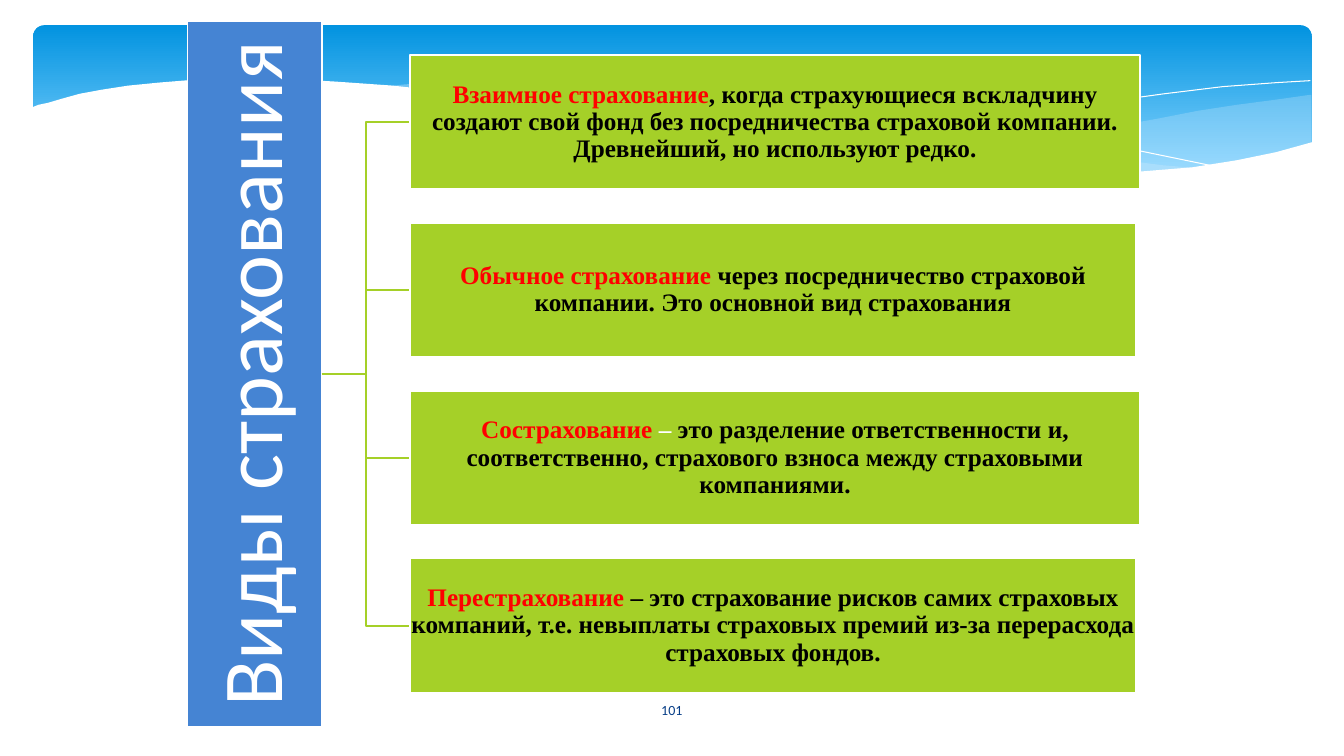
"""Builds the slide on the four kinds of insurance."""
from dataclasses import dataclass

from lxml import etree
from pptx import Presentation
from pptx.dml.color import RGBColor
from pptx.enum.shapes import MSO_CONNECTOR, MSO_SHAPE
from pptx.enum.text import MSO_ANCHOR, MSO_AUTO_SIZE, PP_ALIGN
from pptx.oxml.ns import qn
from pptx.util import Pt

RECTANGLE = MSO_SHAPE.RECTANGLE
ROUNDED = MSO_SHAPE.ROUNDED_RECTANGLE
ELBOW = MSO_CONNECTOR.ELBOW
CENTER = PP_ALIGN.CENTER
MIDDLE = MSO_ANCHOR.MIDDLE
NO_AUTOFIT = MSO_AUTO_SIZE.NONE

TITLE = "Виды страхования"
PAGE_NUMBER = "101"
KINDS = [
    [("Взаимное страхование", "term"),
     (", когда страхующиеся вскладчину создают свой фонд без посредничества "
      "страховой компании. Древнейший, но используют редко.", "body")],
    [("Обычное страхование ", "term"),
     ("через посредничество страховой компании. Это основной вид страхования", "body")],
    [("Сострахование ", "term"), ("– ", "white"),
     ("это разделение ответственности и, соответственно, страхового взноса "
      "между страховыми компаниями.", "body")],
    [("Перестрахование", "term"),
     (" – это страхование рисков самих страховых компаний, т.е. невыплаты "
      "страховых премий из-за перерасхода страховых фондов.", "body")],
]

RIGHT_WAVE = [
    (936, 67.7), (910.8, 71.3), (883.4, 74.9), (855.4, 79.2), (825.8, 85),
    (772.6, 94.3), (723.6, 103), (677.5, 109.4), (635, 115.2), (676.8, 118.1),
    (715, 121), (750, 123.1), (781.2, 123.8), (810.7, 123.1), (837.4, 121.7),
    (861.1, 118.8), (884.2, 115.2), (905, 110.9), (924.5, 105.8), (936.7, 102.2),
    (936.7, 67.7)]
LONG_WAVE = [
    (856.8, 120.2), (830.9, 118.1), (774.7, 110.9), (712.1, 102.2), (641.5, 90.7),
    (589, 80.6), (546.5, 73.4), (506.2, 68.4), (469.4, 63.8), (424.1, 59.8),
    (383, 57.6), (347, 57.6), (314.6, 58.3), (287.3, 60.5), (275, 61.9),
    (310.3, 64.8), (347.8, 69.8), (388.1, 76.3), (431.3, 83.5), (508.3, 97.2),
    (577.4, 108), (638.6, 115.9), (693.4, 121), (742.3, 123.8), (785.5, 124.6),
    (823, 123.1), (848.9, 121)]
FALLING_LINE = [
    (296.6, 64.8), (315.4, 61.9), (338.4, 60.5), (371.5, 59), (415.4, 58.7),
    (469.4, 60.5), (534.2, 65.5), (610.6, 74.2), (698.4, 86.4), (797.8, 104.4),
    (871.2, 119.5)]
RISING_LINE = [
    (589, 108.7), (626.4, 101.5), (667.4, 93.6), (717.8, 84.2), (774, 74.9),
    (831.6, 67), (873.4, 61.9), (912.2, 59), (936, 57.6)]
WHITE_WAVE = [
    (937.5, 101.5), (911.5, 108.7), (883.4, 114.5), (851.8, 119.5), (816.5, 122.4),
    (776.2, 123.1), (730.8, 122.4), (679.7, 118.8), (621.4, 112.3), (555.8, 103.7),
    (483.1, 92.2), (429.1, 82.1), (375.1, 73.4), (326.2, 66.2), (280.8, 61.2),
    (239.8, 58.3), (203, 56.2), (169.2, 56.2), (139.7, 56.9), (113.8, 59),
    (91.4, 61.2), (72.7, 64.1), (56.9, 67), (43.9, 70.6), (34.6, 73.4),
    (27.4, 74.9), (22.3, 77), (22.3, 161.3), (938.2, 161.3), (938.2, 101)]
WAVES = [(RIGHT_WAVE, "wave", 29), (LONG_WAVE, "wave", 40), (FALLING_LINE, None, 100),
         (RISING_LINE, None, 100), (WHITE_WAVE, "white", 100)]

BANNER = (23.8, 18, 913, 112.3)
MIDDLE_Y = 267.1
BAR_CENTER_X, BAR_LENGTH, BAR_THICKNESS = 181.9, 504.7, 96
BOX_LEFT, BOX_HEIGHT, BOX_STEP = 293, 96, 119.9
BOX_WIDTHS = (521.3, 518.4)
NUMBER_BOX = (419, 492.5, 121.7, 28.8)


@dataclass(frozen=True)
class Theme:
    """Colours, fonts and sizes of the slide."""
    white: str = "FFFFFF"
    sky_top: str = "0293E0"
    sky_bottom: str = "83D3FE"
    wave: str = "C6E7FC"
    bar: str = "4584D3"
    box: str = "A5D028"
    term: str = "FF0000"
    body: str = "000000"
    number: str = "073E87"
    sans: str = "Calibri"
    serif: str = "Times New Roman"
    title_size: float = 61
    box_size: float = 18
    number_size: float = 10
    line_width: float = 1.25

    def color(self, name):
        """Return the named colour."""
        return RGBColor.from_string(getattr(self, name))


THEME = Theme()


def points(*values):
    """Convert numbers to point lengths."""
    return [Pt(value) for value in values]


def paint(shape, fill, line="white"):
    """Give a shape a plain fill and outline."""
    shape.fill.solid()
    shape.fill.fore_color.rgb = THEME.color(fill)
    shape.line.color.rgb = THEME.color(line)
    shape.line.width = Pt(THEME.line_width)


def write(shape, runs, font_name, size, inset, bold=False, spacing=1.0):
    """Write one centred paragraph of coloured runs."""
    frame = shape.text_frame
    frame.word_wrap = True
    frame.auto_size = NO_AUTOFIT
    frame.vertical_anchor = MIDDLE
    frame.margin_left = frame.margin_right = Pt(inset)
    frame.margin_top = frame.margin_bottom = Pt(inset)
    paragraph = frame.paragraphs[0]
    paragraph.alignment = CENTER
    paragraph.line_spacing = spacing
    for text, color in runs:
        run = paragraph.add_run()
        run.text = text
        run.font.name = font_name
        run.font.size = Pt(size)
        run.font.bold = bold
        run.font.color.rgb = THEME.color(color)


def draw_wave(slide, outline, fill, opacity):
    """Draw a filled wave, or a thin white curve when there is no fill."""
    vertices = [points(*vertex) for vertex in outline]
    builder = slide.shapes.build_freeform(*vertices[0], scale=1.0)
    builder.add_line_segments(vertices[1:], close=fill is not None)
    shape = builder.convert_to_shape()
    shape.shadow.inherit = False
    if fill is None:
        shape.fill.background()
        shape.line.color.rgb = THEME.color("white")
        shape.line.width = Pt(0)
        return
    paint(shape, fill)
    shape.line.fill.background()
    color = shape.element.spPr.find(qn("a:solidFill"))[0]
    etree.SubElement(color, qn("a:alpha")).set("val", str(opacity * 1000))


def draw_banner(slide):
    """Draw the blue banner and its waves."""
    banner = slide.shapes.add_shape(ROUNDED, *points(*BANNER))
    banner.shadow.inherit = False
    banner.adjustments[0] = 0.07
    banner.line.fill.background()
    banner.fill.gradient()
    banner.fill.gradient_angle = 270
    stops = banner.fill.gradient_stops
    for stop, color, position in zip(stops, ("sky_top", "sky_bottom"), (0, 0.9)):
        stop.color.rgb = THEME.color(color)
        stop.position = position
    for outline, fill, opacity in WAVES:
        draw_wave(slide, outline, fill, opacity)


def draw_title(slide):
    """Turn the title into the upright bar."""
    title = slide.shapes.title
    slide.shapes.element.append(title.element)
    title.left, title.top, title.width, title.height = points(
        BAR_CENTER_X - BAR_LENGTH / 2, MIDDLE_Y - BAR_THICKNESS / 2, BAR_LENGTH, BAR_THICKNESS)
    title.rotation = 270
    paint(title, "bar")
    write(title, [(TITLE, "white")], THEME.sans, THEME.title_size, 3, spacing=0.9)


def draw_kinds(slide):
    """Draw the elbow connectors and the four boxes."""
    first = MIDDLE_Y - BOX_STEP * (len(KINDS) - 1) / 2
    centers = [first + BOX_STEP * index for index in range(len(KINDS))]
    bar_right = BAR_CENTER_X + BAR_THICKNESS / 2
    for center in centers:
        link = slide.shapes.add_connector(ELBOW, *points(bar_right, MIDDLE_Y, BOX_LEFT, center))
        link.line.color.rgb = THEME.color("box")
        link.line.width = Pt(THEME.line_width)
        etree.SubElement(link.element.spPr, qn("a:effectLst"))
    for index, (runs, center) in enumerate(zip(KINDS, centers)):
        box = slide.shapes.add_shape(RECTANGLE, *points(
            BOX_LEFT, center - BOX_HEIGHT / 2, BOX_WIDTHS[index % 2], BOX_HEIGHT))
        box.shadow.inherit = False
        paint(box, "box")
        write(box, runs, THEME.serif, THEME.box_size, 0.9, bold=True, spacing=0.9)


def main():
    """Build and save the presentation."""
    presentation = Presentation()
    presentation.slide_width, presentation.slide_height = points(960, 540)
    slide = presentation.slides.add_slide(presentation.slide_layouts[5])
    draw_banner(slide)
    draw_title(slide)
    draw_kinds(slide)
    number = slide.shapes.add_textbox(*points(*NUMBER_BOX))
    write(number, [(PAGE_NUMBER, "number")], THEME.sans, THEME.number_size, 3.6)
    presentation.save("out.pptx")


if __name__ == "__main__":
    main()
